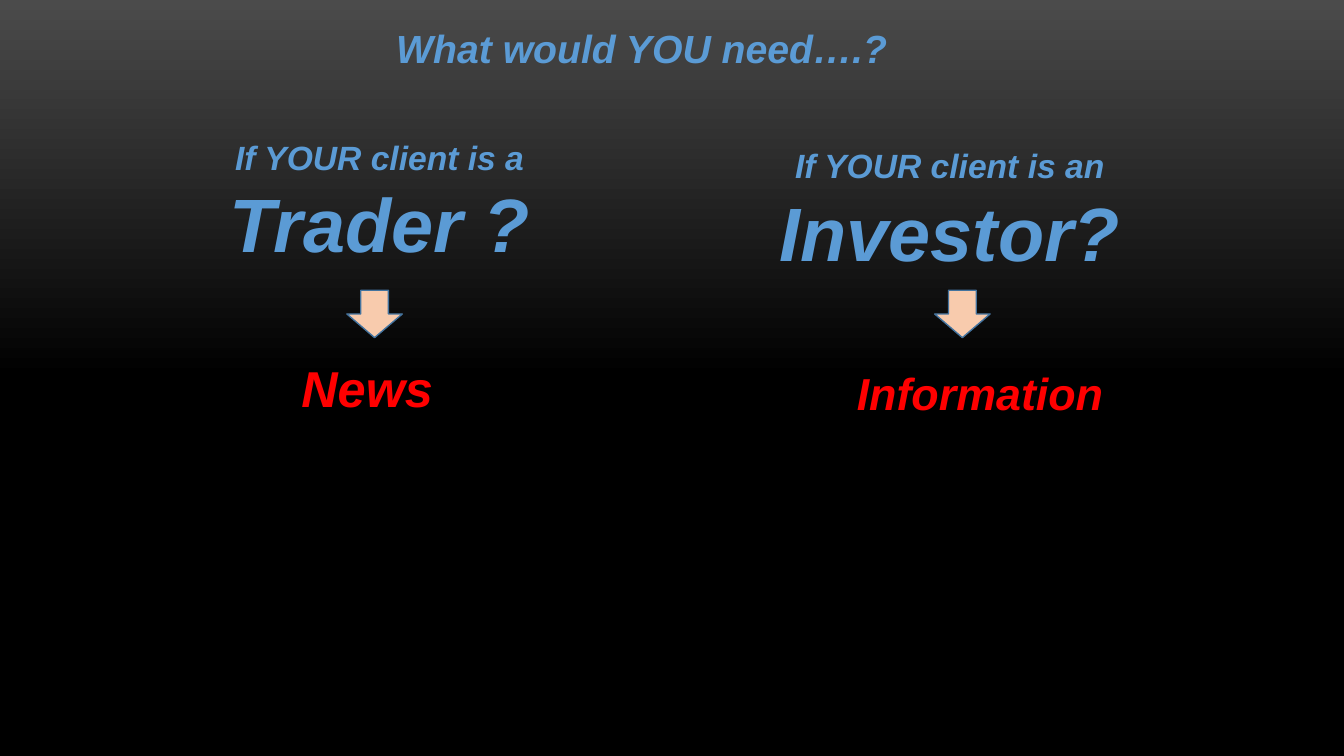
from copy import deepcopy
from pptx import Presentation
from pptx.dml.color import RGBColor
from pptx.enum.shapes import MSO_SHAPE
from pptx.enum.text import MSO_ANCHOR, MSO_AUTO_SIZE, PP_ALIGN
from pptx.oxml.ns import qn
from pptx.util import Inches, Pt

COLORS = {
    "top": "4B4B4B", "base": "000000", "blue": "5B9BD5",
    "red": "FF0000", "peach": "F8CBAD", "edge": "43739E",
}


def color(name):
    return RGBColor.from_string(COLORS[name])


def write(shape, lines, ink, align):
    frame = shape.text_frame
    frame.word_wrap = True
    frame.auto_size = MSO_AUTO_SIZE.SHAPE_TO_FIT_TEXT
    frame.vertical_anchor = MSO_ANCHOR.TOP
    frame.text = "\n".join(text for text, size in lines)
    for para, (text, size) in zip(frame.paragraphs, lines):
        para.alignment = align
        font = para.font
        font.name, font.size = "Arial", Pt(size)
        font.bold = font.italic = True
        font.color.rgb = color(ink)


def backdrop(slide):
    fill = slide.background.fill
    fill.gradient()
    fill.gradient_angle = 270
    first, last = fill.gradient_stops
    first.position, last.position = 0, 0.5
    first.color.rgb, last.color.rgb = color("top"), color("base")
    stops = next(slide.element.iter(qn("a:gsLst")))
    stops.append(deepcopy(stops[-1]))
    fill.gradient_stops[2].position = 1


def heading(slide, left, top, width, height):
    title = slide.shapes.title
    title.left, title.top = Inches(left), Inches(top)
    title.width, title.height = Inches(width), Inches(height)
    write(title, [("What would YOU need….?", 28)], "blue", PP_ALIGN.LEFT)


def column(slide, left, top, width, ask, who, arrow, need):
    shapes = slide.shapes
    query = shapes.add_textbox(Inches(left), Inches(top), Inches(width), Inches(1.41))
    write(query, [(ask, 24), (who, 54)], "blue", PP_ALIGN.CENTER)

    dx, dy = arrow
    down = shapes.add_shape(MSO_SHAPE.DOWN_ARROW, Inches(left + dx), Inches(top + dy),
                            Inches(0.55), Inches(0.47))
    down.shadow.inherit = False
    down.fill.solid()
    down.fill.fore_color.rgb = color("peach")
    down.line.color.rgb = color("edge")
    down.line.width = Pt(1)

    text, size, dx, dy, wide, high = need
    reply = shapes.add_textbox(Inches(left + dx), Inches(top + dy),
                               Inches(wide), Inches(high))
    write(reply, [(text, size)], "red", PP_ALIGN.LEFT)


def main():
    deck = Presentation()
    deck.slide_width, deck.slide_height = Inches(13.33), Inches(7.5)
    slide = deck.slides.add_slide(deck.slide_layouts[5])
    backdrop(slide)
    heading(slide, 3.83, 0.19, 5.2, 0.57)
    column(slide, 2.1, 1.31, 3.33, "If YOUR client is a", "Trader ?",
           (1.34, 1.57), ("News", 36, 0.79, 2.18, 1.89, 0.71))
    column(slide, 7.61, 1.39, 3.62, "If YOUR client is an", "Investor?",
           (1.66, 1.49), ("Information", 32, 0.79, 2.19, 2.84, 0.64))
    deck.save("out.pptx")


if __name__ == "__main__":
    main()
